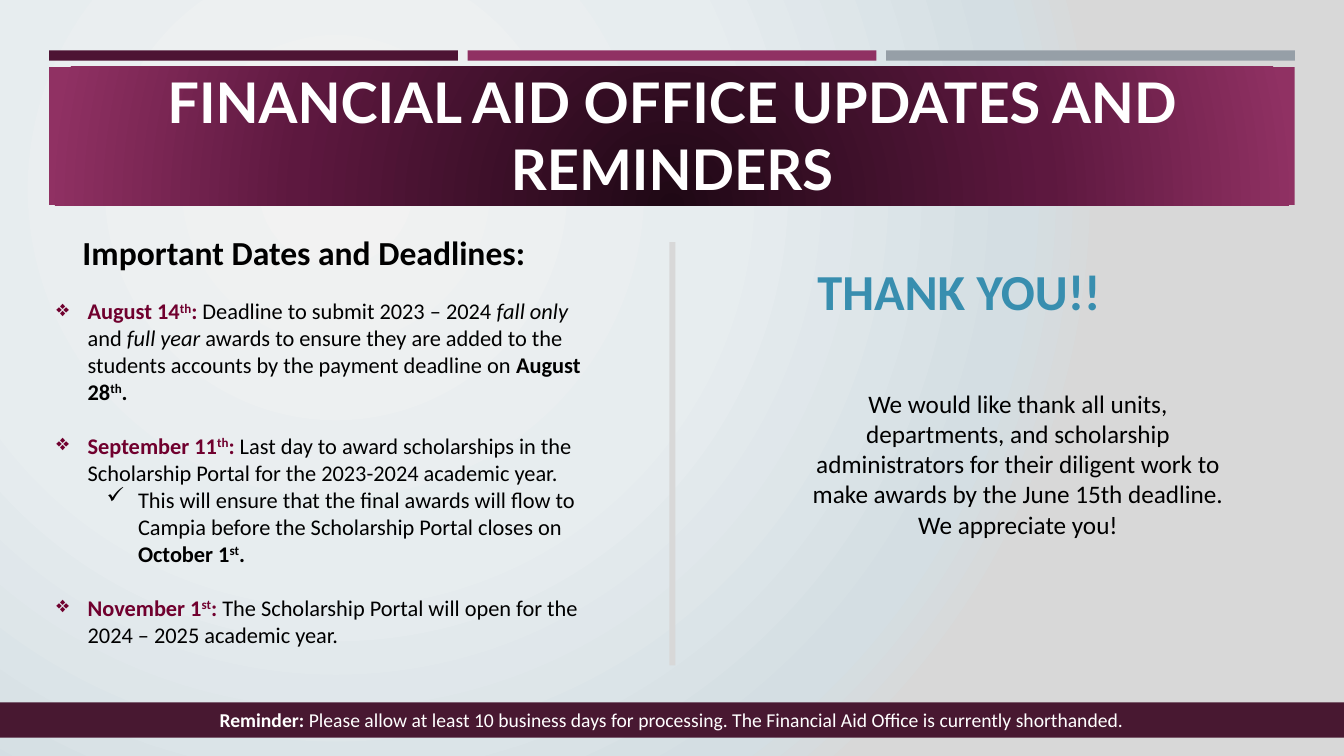
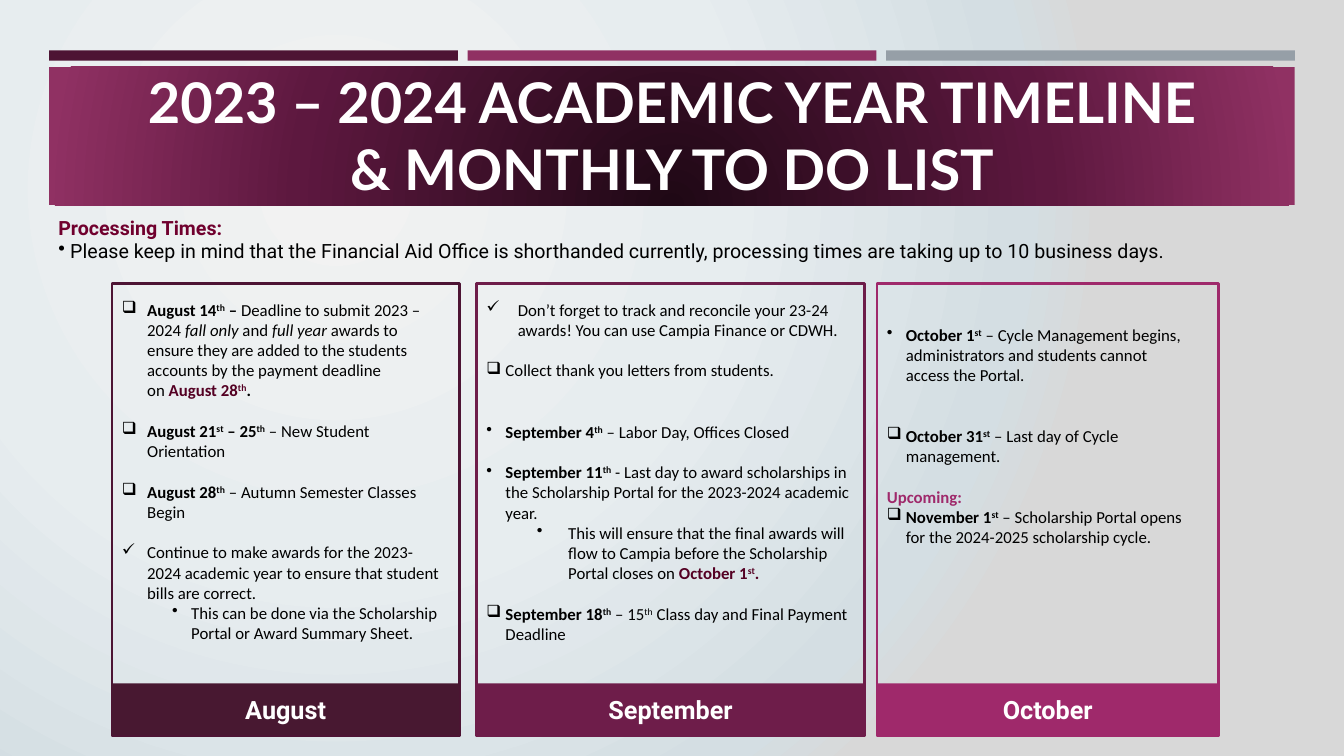
import dataclasses

import lxml.etree
import pptx
import pptx.dml.color
import pptx.enum.shapes
import pptx.enum.text
import pptx.oxml.ns
import pptx.util

Cm = pptx.util.Cm
Pt = pptx.util.Pt
qn = pptx.oxml.ns.qn
ALIGN = pptx.enum.text.PP_ALIGN
ANCHOR = pptx.enum.text.MSO_ANCHOR


@dataclasses.dataclass(frozen=True)
class Theme:
    title_font: str = "Lato"
    body_font: str = "Calibri"
    label_font: str = "Roboto"

    title_size: int = 40
    thanks_size: int = 36
    heading_size: int = 24
    note_size: int = 18
    list_size: int = 16
    small_size: int = 14
    card_size: int = 12
    line_height: float = 1.22

    white: str = "FFFFFF"
    black: str = "000000"
    plum: str = "4D1434"
    berry: str = "903163"
    steel: str = "969FA7"
    dark_plum: str = "481831"
    mid_plum: str = "6E1D4A"
    magenta: str = "9F296B"
    wine: str = "70002E"
    dark_wine: str = "540023"
    teal: str = "388EAF"
    grey: str = "D8D8D8"

    page_stops: tuple = ((0, "F2F2F2"), (50, "E7EDEF"), (89, "D4DEE3"), (100, "D8D8D8"))
    page_focus: tuple = (50, 50, 100, 100)
    title_stops: tuple = ((0, "1F0815"), (60, "5D183F"), (100, "903163"))
    title_focus: tuple = (50, 130, 50, -30)


THEME = Theme()
PAGE_WIDTH, PAGE_HEIGHT = 33.87, 19.05
TITLE_BAND = (1.24, 1.68, 31.39, 3.5)


@dataclasses.dataclass(frozen=True)
class Line:
    """A paragraph: indents in cm, gap in lines of white space above it."""
    text: str
    bullet: str = ""
    left: float = 0
    hang: float = 0
    gap: int = 0
    accent: str = ""


@dataclasses.dataclass(frozen=True)
class Month:
    name: str
    left: float
    width: float
    frame_color: str
    label_color: str
    text_top: float
    text_width: float
    tasks: tuple


def rgb(color):
    return pptx.dml.color.RGBColor.from_string(color)


def split_styles(markup):
    """Yield (text, marks): * bold, _ italic, ^ superscript, | accent, ~ hard space."""
    marks, text = set(), ""
    for char in markup:
        if char in "*_^|":
            if text:
                yield text, frozenset(marks)
            marks ^= {char}
            text = ""
        else:
            text += chr(160) if char == "~" else char
    if text:
        yield text, frozenset(marks)


def write_text(frame, lines, *, size, font=THEME.body_font, color=THEME.black,
               accent=THEME.wine, bold=False, align=ALIGN.LEFT, anchor=ANCHOR.TOP):
    """Fill a text frame with Lines or marked-up strings."""
    frame.word_wrap = True
    frame.auto_size = pptx.enum.text.MSO_AUTO_SIZE.NONE
    frame.vertical_anchor = anchor
    for index, line in enumerate(lines):
        if isinstance(line, str):
            line = Line(line)
        paragraph = frame.add_paragraph() if index else frame.paragraphs[0]
        paragraph.alignment = align
        paragraph.space_before = Pt(round(line.gap * size * THEME.line_height, 1))
        if line.bullet:
            set_bullet(paragraph, line)
        for text, marks in split_styles(line.text):
            for part_index, part in enumerate(text.split("\n")):
                if part_index:
                    paragraph.add_line_break()
                run = paragraph.add_run()
                run.text = part
                run.font.name = font
                run.font.size = Pt(size)
                run.font.bold = bold or "*" in marks
                run.font.italic = "_" in marks
                run.font.color.rgb = rgb((line.accent or accent) if "|" in marks else color)
                if "^" in marks:
                    run.font._element.set("baseline", "30000")


def set_bullet(paragraph, line):
    properties = paragraph._p.get_or_add_pPr()
    properties.set("marL", str(Cm(line.left)))
    properties.set("indent", str(-Cm(line.hang)))
    lxml.etree.SubElement(properties, qn("a:buChar")).set("char", line.bullet)


def add_text(slide, box, lines, **text_format):
    textbox = slide.shapes.add_textbox(*map(Cm, box))
    write_text(textbox.text_frame, lines, **text_format)


def add_block(slide, box, fill=None, outline=None):
    block = slide.shapes.add_shape(pptx.enum.shapes.MSO_SHAPE.RECTANGLE, *map(Cm, box))
    block.shadow.inherit = False
    if fill:
        block.fill.solid()
        block.fill.fore_color.rgb = rgb(fill)
    else:
        block.fill.background()
    if outline:
        block.line.color.rgb = rgb(outline)
        block.line.width = Pt(1.75)
    else:
        block.line.fill.background()
    return block


def set_circle_gradient(fill, owner, stops, focus):
    """Give the first gradient inside owner a circular path; stops and focus in percent."""
    fill.gradient()
    gradient = owner.find(".//" + qn("a:gradFill"))
    gradient.clear()
    gradient.set("rotWithShape", "1")
    stop_list = lxml.etree.SubElement(gradient, qn("a:gsLst"))
    for position, color in stops:
        stop = lxml.etree.SubElement(stop_list, qn("a:gs"))
        stop.set("pos", str(position * 1000))
        lxml.etree.SubElement(stop, qn("a:srgbClr")).set("val", color)
    circle = lxml.etree.SubElement(gradient, qn("a:path"))
    circle.set("path", "circle")
    target = lxml.etree.SubElement(circle, qn("a:fillToRect"))
    for side, percent in zip("ltrb", focus):
        target.set(side, str(percent * 1000))


def dress_layout(layout, slide):
    """Draw the stripes and title band on a slide, then move them behind the layout's title."""
    for placeholder in list(layout.placeholders):
        if placeholder.placeholder_format.idx != 0:
            placeholder.element.getparent().remove(placeholder.element)

    left, top, width, height = TITLE_BAND
    gap = 0.25
    stripe_width = (width - 2 * gap) / 3
    decoration = [
        add_block(slide, (left + index * (stripe_width + gap), 1.27, stripe_width, 0.26), color)
        for index, color in enumerate((THEME.plum, THEME.berry, THEME.steel))
    ]
    title_band = add_block(slide, TITLE_BAND, THEME.berry)
    set_circle_gradient(title_band.fill, title_band.element,
                        THEME.title_stops, THEME.title_focus)
    decoration.append(title_band)
    for position, block in enumerate(decoration, start=2):
        layout.shapes.element.insert(position, block.element)


def place_title(slide, text):
    left, top, width, height = TITLE_BAND
    title = slide.shapes.title
    title.left, title.top = Cm(left + 0.38), Cm(top + 0.35)
    title.width, title.height = Cm(width - 0.76), Cm(height - 0.76)
    write_text(title.text_frame, [text], size=THEME.title_size, font=THEME.title_font,
               color=THEME.white, bold=True, align=ALIGN.CENTER, anchor=ANCHOR.MIDDLE)


def add_deadlines(slide, left, top):
    add_text(slide, (left + 0.66, top, 14.78, 1.88), ["Important Dates and Deadlines:"],
             size=THEME.heading_size, bold=True)
    date = {"bullet": "❖", "left": 0.79, "hang": 0.79}
    add_text(slide, (left, top + 1.65, 14.3, 10.69), [
        Line("*|August 14^th^:|* Deadline to submit 2023 – 2024 _fall only_ and _full year_ "
             "awards to ensure they are added to the students accounts by the payment "
             "deadline on *August 28^th^.*", **date),
        Line("*|September 11^th^:|* Last day to award scholarships in the Scholarship Portal "
             "for the 2023-2024 academic year.", gap=1, **date),
        Line("This will ensure that the final awards will flow to Campia before the "
             "Scholarship Portal closes on *October 1^st^.*", "✓", 2.06, 0.79),
        Line("*|November 1^st^:|* The Scholarship Portal will open for the 2024 – 2025 "
             "academic year.", gap=1, **date),
    ], size=THEME.list_size)


def add_thanks(slide, left, top):
    add_text(slide, (left + 0.31, top, 10.62, 2.36), ["THANK YOU!!"],
             size=THEME.thanks_size, color=THEME.teal, bold=True)
    add_text(slide, (left, top + 3.22, 11.23, 4.11), [
        "We would like thank all units, departments, and scholarship administrators for their "
        "diligent work to make awards by the June 15th deadline. We appreciate you!",
    ], size=THEME.note_size, align=ALIGN.CENTER)


def add_reminder(slide, top):
    strip = add_block(slide, (0, top, PAGE_WIDTH, 0.89), THEME.dark_plum)
    write_text(strip.text_frame, [
        "*Reminder:* Please allow at least 10 business days for processing. "
        "The Financial Aid Office is currently shorthanded.",
    ], size=THEME.small_size, color=THEME.white, align=ALIGN.CENTER, anchor=ANCHOR.MIDDLE)


def add_processing_times(slide, box):
    add_text(slide, box, [
        "*|Processing Times:|*",
        Line("Please keep in mind that the Financial Aid Office is shorthanded currently, "
             "processing times are taking up to 10 business days.", "•", 0.3, 0.3),
    ], size=THEME.small_size, font=THEME.label_font)


def add_month(slide, month, top, height):
    label_height = 1.3
    add_block(slide, (month.left, top, month.width, height), outline=month.frame_color)
    label = add_block(slide, (month.left, top + height - label_height - 0.03,
                              month.width, label_height), month.label_color)
    write_text(label.text_frame, [month.name], size=THEME.note_size, font=THEME.label_font,
               color=THEME.white, bold=True, align=ALIGN.CENTER, anchor=ANCHOR.MIDDLE)
    add_text(slide, (month.left, top + month.text_top, month.text_width,
                     height - label_height - month.text_top),
             month.tasks, size=THEME.card_size, accent=THEME.dark_wine)


WIDE = {"left": 0.64, "hang": 0.64}
NARROW = {"left": 0.48, "hang": 0.48}

MONTHS = (
    Month("August", 2.82, 8.76, THEME.plum, THEME.dark_plum, 0.27, 8.69, (
        Line("*August 14^th^ –* Deadline to submit 2023 – 2024 _fall only_ and _full year_ "
             "awards to ensure they are added to the students accounts by the payment "
             "deadline on~*|August~28^th^|.*", "❑", **WIDE),
        Line("*August 21^st^ – 25^th^* – New Student Orientation", "❑", gap=1, **WIDE),
        Line("*August 28^th^* – Autumn Semester Classes Begin", "❑", gap=1, **WIDE),
        Line("Continue to make awards for the 2023-2024 academic year to ensure that "
             "student bills are correct.", "✓", gap=1, **WIDE),
        Line("This can be done via the Scholarship Portal or Award Summary Sheet.",
             "•", 1.75, 0.48),
    )),
    Month("September", 12.01, 9.78, THEME.mid_plum, THEME.mid_plum, 0.27, 9.78, (
        Line("Don’t forget to track and reconcile your 23-24 awards! You can use Campia "
             "Finance or CDWH.", "✓", 0.79, 0.79),
        Line("Collect thank you letters from students.", "❑", gap=1, **NARROW),
        Line("*September 4^th^* – Labor Day, Offices Closed", "•", gap=2, **NARROW),
        Line("*September 11^th^* - Last day to award scholarships in the Scholarship Portal "
             "for the 2023-2024 academic year.", "•", gap=1, **NARROW),
        Line("This will ensure that the final awards will flow to Campia before the "
             "Scholarship Portal closes on *|October 1^st^.|*", "•", 2.06, 0.79),
        Line("*September 18^th^* – 15^th^ Class day and Final Payment Deadline",
             "❑", gap=1, **NARROW),
    )),
    Month("October", 22.1, 8.61, THEME.magenta, THEME.magenta, 0.9, 8.08, (
        Line("*October 1^st^* – Cycle Management begins, administrators and students cannot "
             "access the Portal.", "•", **NARROW),
        Line("*October 31^st^* – Last day of Cycle management.", "❑", gap=2, **NARROW),
        Line("*|Upcoming:|*", gap=1, accent=THEME.magenta),
        Line("*November 1^st^* – Scholarship Portal opens for the 2024-2025 scholarship "
             "cycle.", "❑", **NARROW),
    )),
)


def build_updates(slide):
    place_title(slide, "FINANCIAL AID OFFICE UPDATES AND REMINDERS")
    add_deadlines(slide, 1.17, 5.72)
    add_block(slide, (16.87, 6.1, 0.15, 10.67), THEME.grey)
    add_thanks(slide, 20.04, 6.43)
    add_reminder(slide, 17.7)


def build_timeline(slide):
    place_title(slide, "2023 – 2024 ACADEMIC YEAR TIMELINE\n& MONTHLY TO DO LIST")
    add_processing_times(slide, (1.22, 5.31, 31.37, 1.45))
    for month in MONTHS:
        add_month(slide, month, 7.15, 11.4)


def main():
    deck = pptx.Presentation()
    deck.slide_width, deck.slide_height = Cm(PAGE_WIDTH), Cm(PAGE_HEIGHT)
    master = deck.slide_master
    set_circle_gradient(master.background.fill, master.element,
                        THEME.page_stops, THEME.page_focus)
    title_only = deck.slide_layouts.get_by_name("Title Only")
    updates, timeline = (deck.slides.add_slide(title_only) for _ in range(2))
    dress_layout(title_only, updates)
    build_updates(updates)
    build_timeline(timeline)
    deck.save("out.pptx")


if __name__ == "__main__":
    main()
